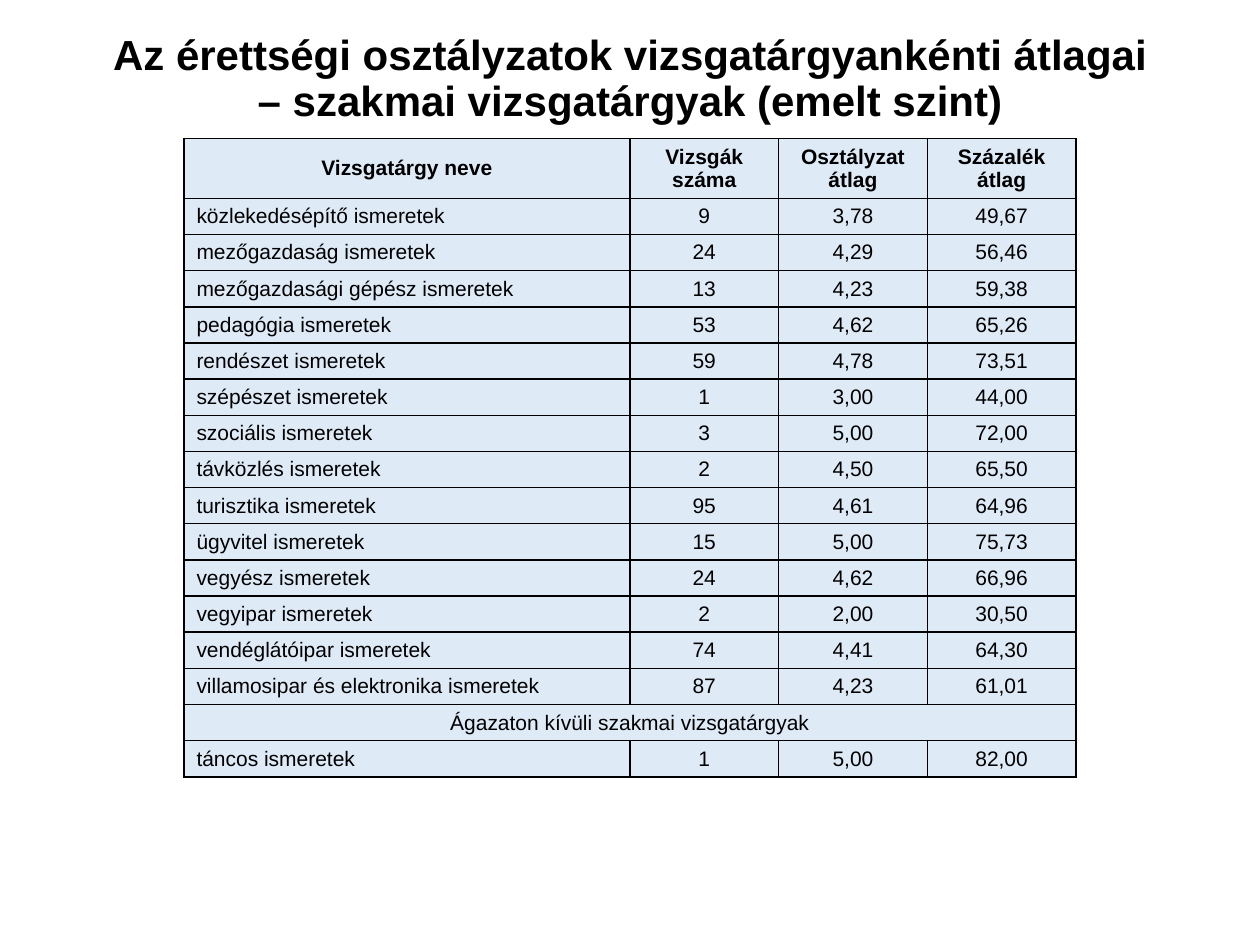
"""Build a slide with a table of average exam grades by vocational subject."""
from lxml import etree
from pptx import Presentation
from pptx.dml.color import RGBColor
from pptx.enum.text import MSO_ANCHOR, MSO_AUTO_SIZE, PP_ALIGN
from pptx.oxml.ns import qn
from pptx.util import Inches, Pt

LEFT, CENTER = PP_ALIGN.LEFT, PP_ALIGN.CENTER
MIDDLE = MSO_ANCHOR.MIDDLE
NO_AUTOFIT = MSO_AUTO_SIZE.NONE

COLORS = {"text": "000000", "border": "000000", "cell": "DEEBF7"}
TITLE = ("Az érettségi osztályzatok vizsgatárgyankénti átlagai "
         "– szakmai vizsgatárgyak (emelt szint)")
HEADER = ("Vizsgatárgy neve", "Vizsgák száma", "Osztályzat átlag", "Százalék átlag")
SECTOR_SUBJECTS = [
    ("közlekedésépítő ismeretek", "9", "3,78", "49,67"),
    ("mezőgazdaság ismeretek", "24", "4,29", "56,46"),
    ("mezőgazdasági gépész ismeretek", "13", "4,23", "59,38"),
    ("pedagógia ismeretek", "53", "4,62", "65,26"),
    ("rendészet ismeretek", "59", "4,78", "73,51"),
    ("szépészet ismeretek", "1", "3,00", "44,00"),
    ("szociális ismeretek", "3", "5,00", "72,00"),
    ("távközlés ismeretek", "2", "4,50", "65,50"),
    ("turisztika ismeretek", "95", "4,61", "64,96"),
    ("ügyvitel ismeretek", "15", "5,00", "75,73"),
    ("vegyész ismeretek", "24", "4,62", "66,96"),
    ("vegyipar ismeretek", "2", "2,00", "30,50"),
    ("vendéglátóipar ismeretek", "74", "4,41", "64,30"),
    ("villamosipar és elektronika ismeretek", "87", "4,23", "61,01"),
]
OTHER_HEADING = ("Ágazaton kívüli szakmai vizsgatárgyak",)
OTHER_SUBJECTS = [("táncos ismeretek", "1", "5,00", "82,00")]
ROWS = [HEADER, *SECTOR_SUBJECTS, OTHER_HEADING, *OTHER_SUBJECTS]

COLUMN_WIDTHS = (3.54, 1.18, 1.18, 1.18)
HEADER_HEIGHT, ROW_HEIGHT = 0.47, 0.28
TITLE_BOX = {"left": 0.69, "top": -0.09, "width": 8.62, "height": 1.45}
TITLE_FONT = {"name": "Arial", "size": Pt(24), "bold": True}
HEADER_FONT = {"name": "Arial", "size": Pt(12), "bold": True}
BODY_FONT = {**HEADER_FONT, "bold": False}


def write(frame, text, font_format, alignment):
    frame.text = text
    paragraph = frame.paragraphs[0]
    paragraph.alignment = alignment
    for name, value in font_format.items():
        setattr(paragraph.font, name, value)
    paragraph.font.color.rgb = RGBColor.from_string(COLORS["text"])
    return paragraph


def style_cell(cell):
    cell.vertical_anchor = MIDDLE
    properties = cell._tc.get_or_add_tcPr()
    for side in ("a:lnL", "a:lnR", "a:lnT", "a:lnB"):
        border = etree.SubElement(properties, qn(side), w=str(Pt(1)))
        fill = etree.SubElement(border, qn("a:solidFill"))
        etree.SubElement(fill, qn("a:srgbClr"), val=COLORS["border"])
    cell.fill.solid()
    cell.fill.fore_color.rgb = RGBColor.from_string(COLORS["cell"])


def add_title(slide):
    title = slide.shapes.title
    for name, value in TITLE_BOX.items():
        setattr(title, name, Inches(value))
    frame = title.text_frame
    frame.word_wrap = True
    frame.auto_size = NO_AUTOFIT
    frame.vertical_anchor = MIDDLE
    write(frame, TITLE, TITLE_FONT, CENTER).line_spacing = 0.9


def add_grades(slide):
    heights = [HEADER_HEIGHT] + [ROW_HEIGHT] * (len(ROWS) - 1)
    grades = slide.shapes.add_table(
        len(ROWS), len(HEADER), Inches(1.46), Inches(1.1),
        Inches(sum(COLUMN_WIDTHS)), Inches(sum(heights))).table
    grades.horz_banding = False
    for column, width in zip(grades.columns, COLUMN_WIDTHS):
        column.width = Inches(width)
    for index, (row, height, texts) in enumerate(zip(grades.rows, heights, ROWS)):
        row.height = Inches(height)
        for cell in row.cells:
            style_cell(cell)
        if texts is OTHER_HEADING:
            grades.cell(index, 0).merge(grades.cell(index, len(HEADER) - 1))
        is_subject = texts not in (HEADER, OTHER_HEADING)
        font_format = HEADER_FONT if texts is HEADER else BODY_FONT
        for position, (cell, text) in enumerate(zip(row.cells, texts)):
            alignment = LEFT if is_subject and position == 0 else CENTER
            write(cell.text_frame, text, font_format, alignment)


def main():
    presentation = Presentation()
    presentation.slide_width, presentation.slide_height = Inches(10), Inches(7.5)
    slide = presentation.slides.add_slide(presentation.slide_layouts[5])
    add_title(slide)
    add_grades(slide)
    presentation.save("out.pptx")


if __name__ == "__main__":
    main()
